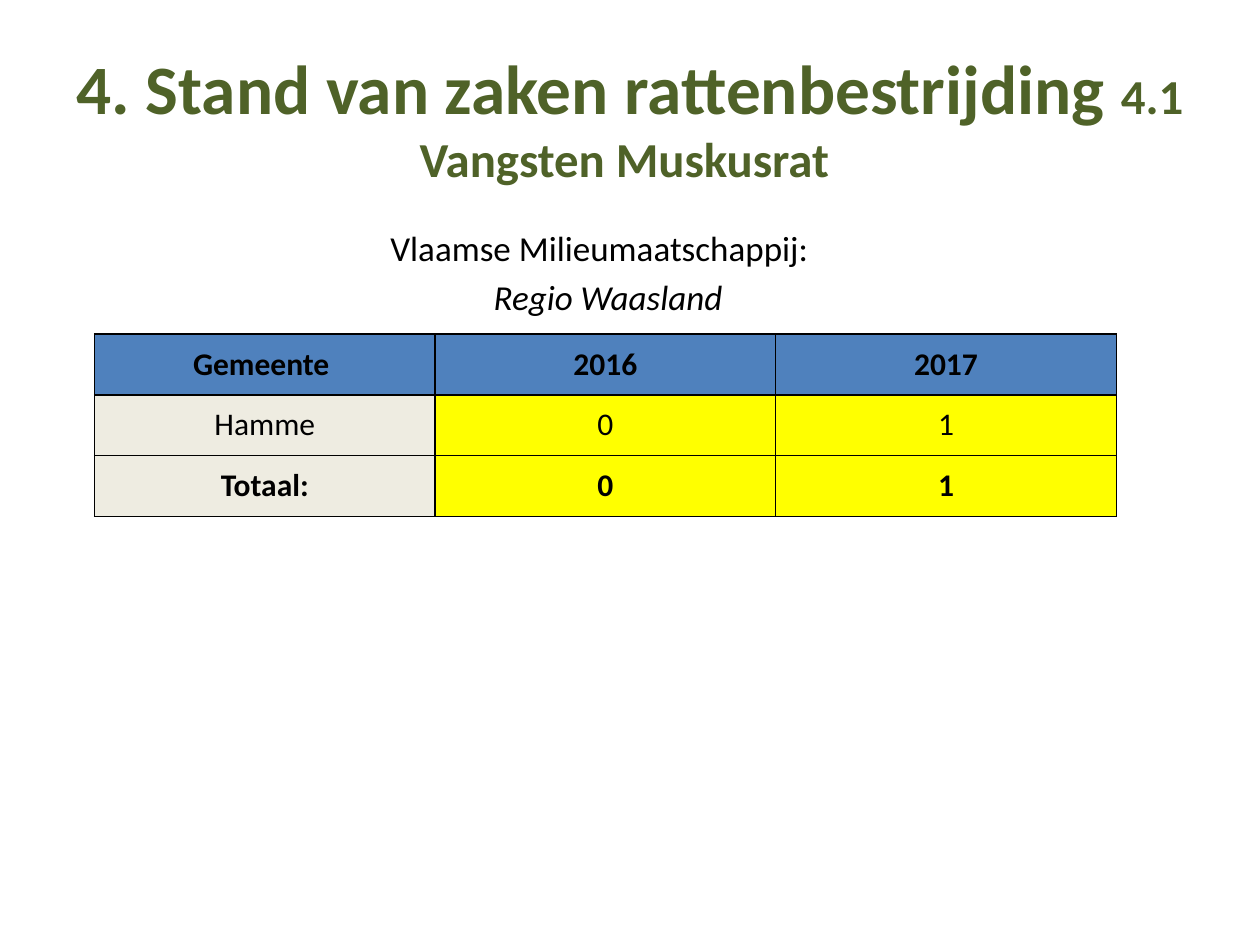
from dataclasses import dataclass

from lxml import etree
from pptx import Presentation, util as u
from pptx.dml.color import RGBColor
from pptx.enum import text
from pptx.oxml import ns


@dataclass(frozen=True)
class Theme:
    font: str = "Calibri"
    green: str = "4F6228"
    black: str = "000000"
    blue: str = "4F81BD"
    sand: str = "EEECE1"
    yellow: str = "FFFF00"
    title: float = 39.6
    subtitle: float = 27.9
    body: float = 20
    cell: float = 18
    border: float = 1


class Deck:
    COLS, ROWS = 40, 30

    def __init__(self, theme):
        self.theme = theme
        self.prs = Presentation()
        self.prs.slide_width, self.prs.slide_height = u.Inches(10), u.Inches(7.5)
        self.s = self.prs.slides.add_slide(self.prs.slide_layouts[6])

    def area(self, col, row, cols, rows):
        """Turn grid columns and rows into slide lengths."""
        dx = self.prs.slide_width / self.COLS
        dy = self.prs.slide_height / self.ROWS
        return [u.Emu(round(n)) for n in (col * dx, row * dy, cols * dx, rows * dy)]

    def run(self, p, words, size, color, bold=False, italic=False):
        r = p.add_run()
        r.text = words
        f = r.font
        f.name, f.size, f.bold, f.italic = self.theme.font, u.Pt(size), bold, italic
        f.color.rgb = RGBColor.from_string(color)

    def box(self, area):
        tf = self.s.shapes.add_textbox(*self.area(*area)).text_frame
        tf.word_wrap = True
        return tf

    def title(self, area, parts):
        tf = self.box(area)
        tf.vertical_anchor = text.MSO_ANCHOR.MIDDLE
        tf.margin_left = tf.margin_right = u.Inches(0.05)
        p = tf.paragraphs[0]
        p.alignment = text.PP_ALIGN.CENTER
        for words, size in parts:
            self.run(p, words, size, self.theme.green, bold=True)

    def body(self, area, lines):
        """Each line is its words, left margin in inches and italic flag."""
        tf = self.box(area)
        for i, (words, margin, italic) in enumerate(lines):
            p = tf.add_paragraph() if i else tf.paragraphs[0]
            p.alignment = text.PP_ALIGN.JUSTIFY
            p.space_before = u.Pt(self.theme.body * 0.2 if i else 0)
            p._p.get_or_add_pPr().set("marL", str(u.Inches(margin)))
            self.run(p, words, self.theme.body, self.theme.black, italic=italic)

    def borders(self, cell):
        tcPr = cell._tc.get_or_add_tcPr()
        for i, side in enumerate(("lnL", "lnR", "lnT", "lnB")):
            ln = etree.Element(ns.qn(f"a:{side}"), w=str(u.Pt(self.theme.border)))
            fill = etree.SubElement(ln, ns.qn("a:solidFill"))
            etree.SubElement(fill, ns.qn("a:srgbClr"), val=self.theme.black)
            tcPr.insert(i, ln)

    def table(self, area, rows):
        """First row is the header, first column the labels, last row the total."""
        t = self.theme
        last = len(rows) - 1
        table = self.s.shapes.add_table(len(rows), len(rows[0]), *self.area(*area)).table
        for i, row in enumerate(rows):
            for j, words in enumerate(row):
                cell = table.cell(i, j)
                fill = t.blue if i == 0 else t.sand if j == 0 else t.yellow
                cell.fill.solid()
                cell.fill.fore_color.rgb = RGBColor.from_string(fill)
                cell.vertical_anchor = text.MSO_ANCHOR.MIDDLE
                p = cell.text_frame.paragraphs[0]
                p.alignment = text.PP_ALIGN.CENTER
                self.run(p, words, t.cell, t.black, bold=i in (0, last))
                self.borders(cell)


def main():
    theme = Theme()
    deck = Deck(theme)
    deck.title((2, 1.2, 36, 5), [
        ("4. Stand van zaken rattenbestrijding ", theme.title),
        ("4.1 Vangsten Muskusrat ", theme.subtitle),
    ])
    deck.body((2, 7, 36, 19.8), [
        ("Vlaamse Milieumaatschappij: ", 2.5, False),
        ("Regio Waasland", 3.32, True),
    ])
    deck.table((3, 10.6, 32.44, 5.8), [
        ("Gemeente ", "2016", "2017"),
        ("Hamme", "0", "1"),
        ("Totaal:", "0", "1"),
    ])
    deck.prs.save("out.pptx")


if __name__ == "__main__":
    main()
